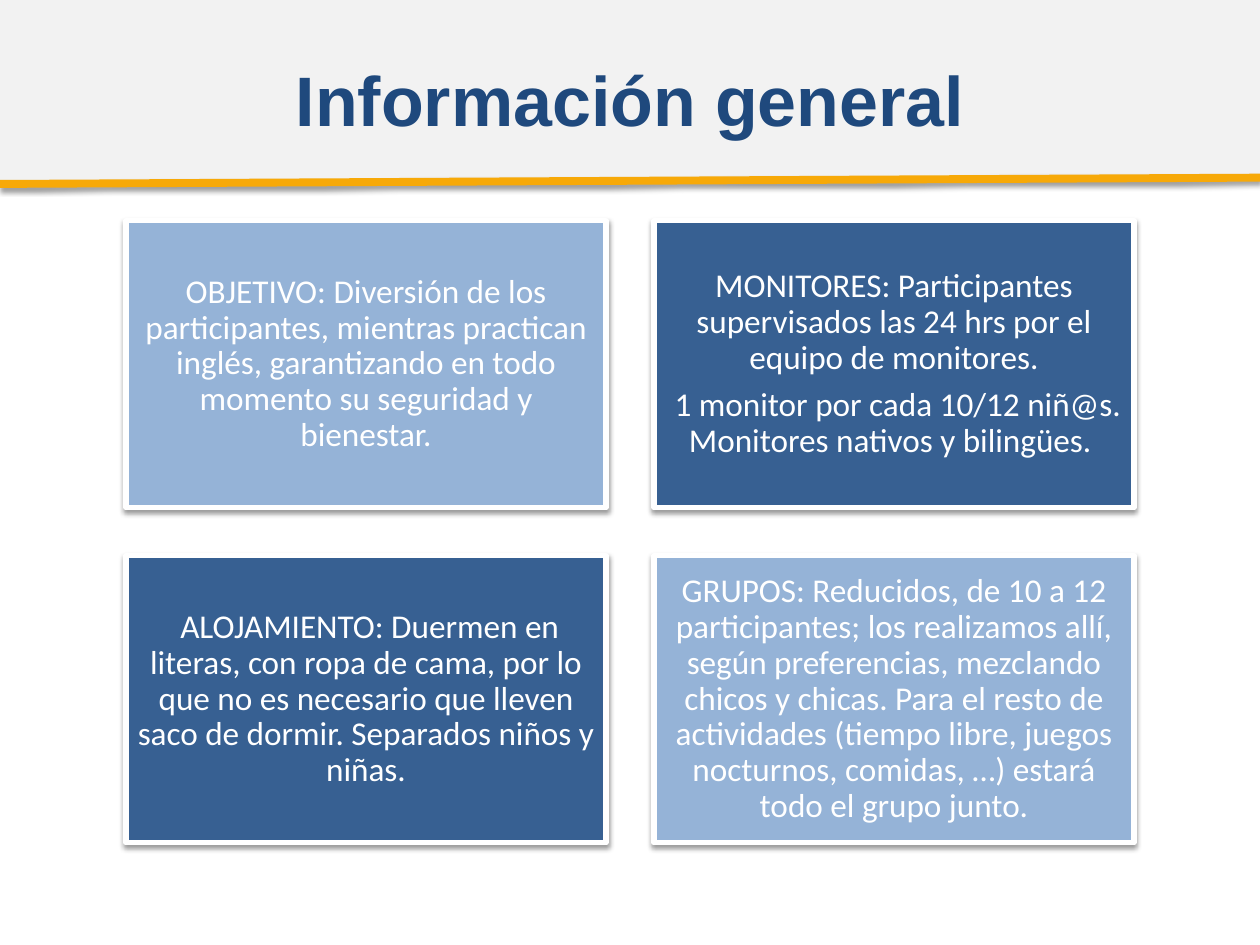
from lxml.etree import SubElement
from pptx import Presentation
from pptx.dml.color import RGBColor
from pptx.enum.shapes import MSO_CONNECTOR as Connector, MSO_SHAPE as Shape
from pptx.enum.text import MSO_ANCHOR as Anchor, PP_ALIGN as Align
from pptx.oxml.ns import qn
from pptx.util import Inches, Pt

# Content
TITLE = "Información general"
CARDS = [
    ["OBJETIVO: Diversión de los participantes, mientras practican inglés, "
     "garantizando en todo momento su seguridad y bienestar."],
    ["MONITORES: Participantes supervisados las 24 hrs por el equipo de monitores.",
     " 1 monitor por cada 10/12 niñ@s. Monitores nativos y bilingües. "],
    [" ALOJAMIENTO: Duermen en literas, con ropa de cama, por lo que no es necesario "
     "que lleven saco de dormir. Separados niños y niñas."],
    ["GRUPOS: Reducidos, de 10 a 12 participantes; los realizamos allí, según "
     "preferencias, mezclando chicos y chicas. Para el resto de actividades (tiempo "
     "libre, juegos nocturnos, comidas, …) estará todo el grupo junto."],
]
LIGHT, DARK, WHITE = "95B3D7", "376092", "FFFFFF"

# Layout, in inches
WIDTH, HEIGHT = 10, 7.5
COLUMNS = 2
GRID_LEFT, GRID_TOP = 1, 1.75
CARD_WIDTH, CARD_HEIGHT = 3.81, 2.28
GAP = WIDTH - 2 * GRID_LEFT - COLUMNS * CARD_WIDTH


def color(value):
    return RGBColor.from_string(value)


def add_shadow(item):
    effects = SubElement(item._element.spPr, qn("a:effectLst"))
    shadow = SubElement(effects, qn("a:outerShdw"), blurRad=str(Pt(3.1)),
                        dist=str(Pt(1.6)), dir="5400000", rotWithShape="0")
    black = SubElement(shadow, qn("a:srgbClr"), val="000000")
    SubElement(black, qn("a:alpha"), val="38000")


def write(box, paragraphs, *, font, size, fill, bold=False, inset=(0.1, 0.05),
          line_spacing=1.0, gap=0):
    frame = box.text_frame
    frame.word_wrap = True
    frame.vertical_anchor = Anchor.MIDDLE
    frame.margin_left = frame.margin_right = Inches(inset[0])
    frame.margin_top = frame.margin_bottom = Inches(inset[1])
    for index, text in enumerate(paragraphs):
        para = frame.add_paragraph() if index else frame.paragraphs[0]
        para.alignment = Align.CENTER
        para.line_spacing = line_spacing
        para.space_after = Pt(gap)
        span = para.add_run()
        span.text = text
        span.font.name, span.font.size, span.font.bold = font, Pt(size), bold
        span.font.color.rgb = color(fill)


def add_panel(page, left, top, width, height, fill):
    panel = page.shapes.add_shape(Shape.RECTANGLE, Inches(left), Inches(top),
                                  Inches(width), Inches(height))
    panel.fill.solid()
    panel.fill.fore_color.rgb = color(fill)
    return panel


deck = Presentation()
deck.slide_width, deck.slide_height = Inches(WIDTH), Inches(HEIGHT)
page = deck.slides.add_slide(deck.slide_layouts[6])

# Header band and rule
band = add_panel(page, 0, 0, WIDTH, 1.43, "F2F2F2")
band.line.fill.background()
band.shadow.inherit = False
rule = page.shapes.add_connector(Connector.STRAIGHT, 0, Inches(1.46),
                                 Inches(WIDTH), Inches(1.41))
rule.line.color.rgb = color("F7A908")
rule.line.width = Pt(4.5)
add_shadow(rule)

# Title
title = page.shapes.add_textbox(Inches(0.5), Inches(0.16), Inches(9), Inches(1.25))
write(title, [TITLE], font="Arial", size=40, fill="1F497D", bold=True)

# Cards, in a checkerboard of two blues
for index, paragraphs in enumerate(CARDS):
    row, column = divmod(index, COLUMNS)
    card = add_panel(page, GRID_LEFT + column * (CARD_WIDTH + GAP),
                     GRID_TOP + row * (CARD_HEIGHT + GAP), CARD_WIDTH, CARD_HEIGHT,
                     DARK if (row + column) % 2 else LIGHT)
    card.line.color.rgb = color(WHITE)
    card.line.width = Pt(3)
    add_shadow(card)
    write(card, paragraphs, font="Calibri", size=19, fill=WHITE, inset=(0.08, 0.08),
          line_spacing=0.9, gap=6.65)

deck.save("out.pptx")
